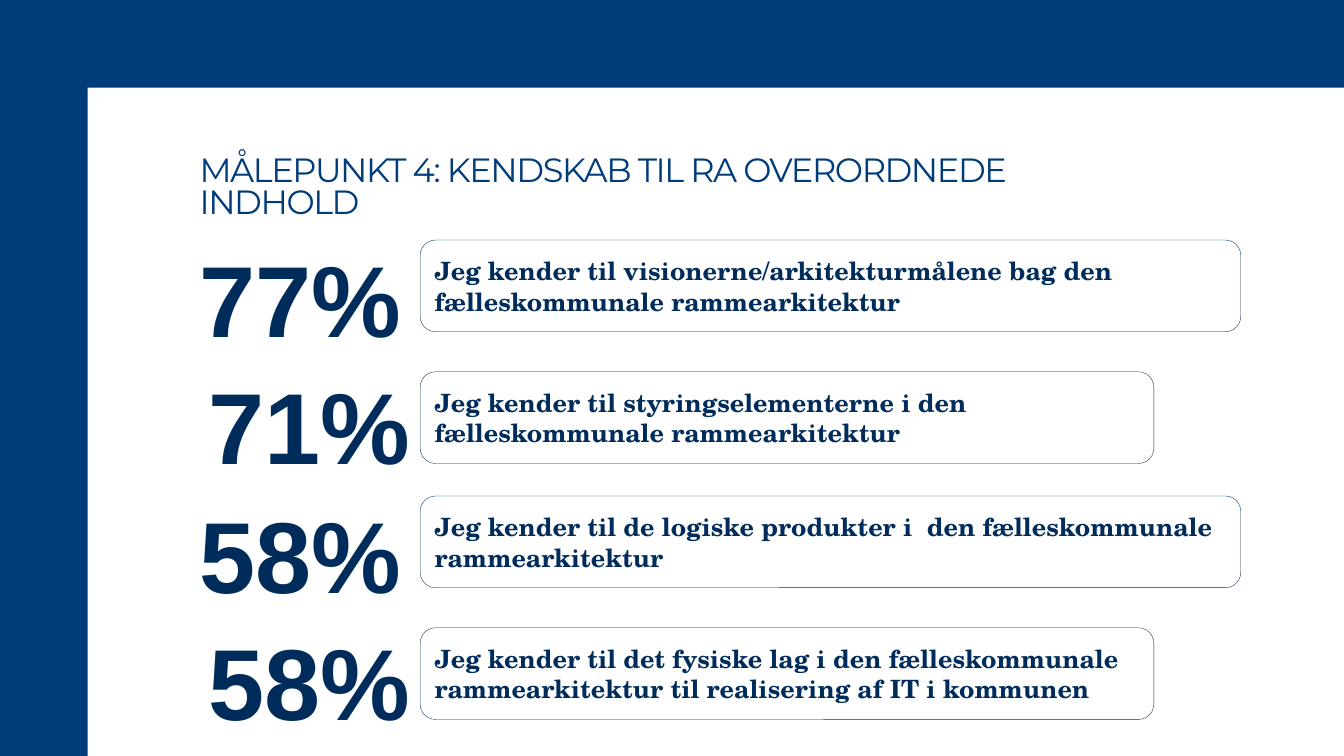
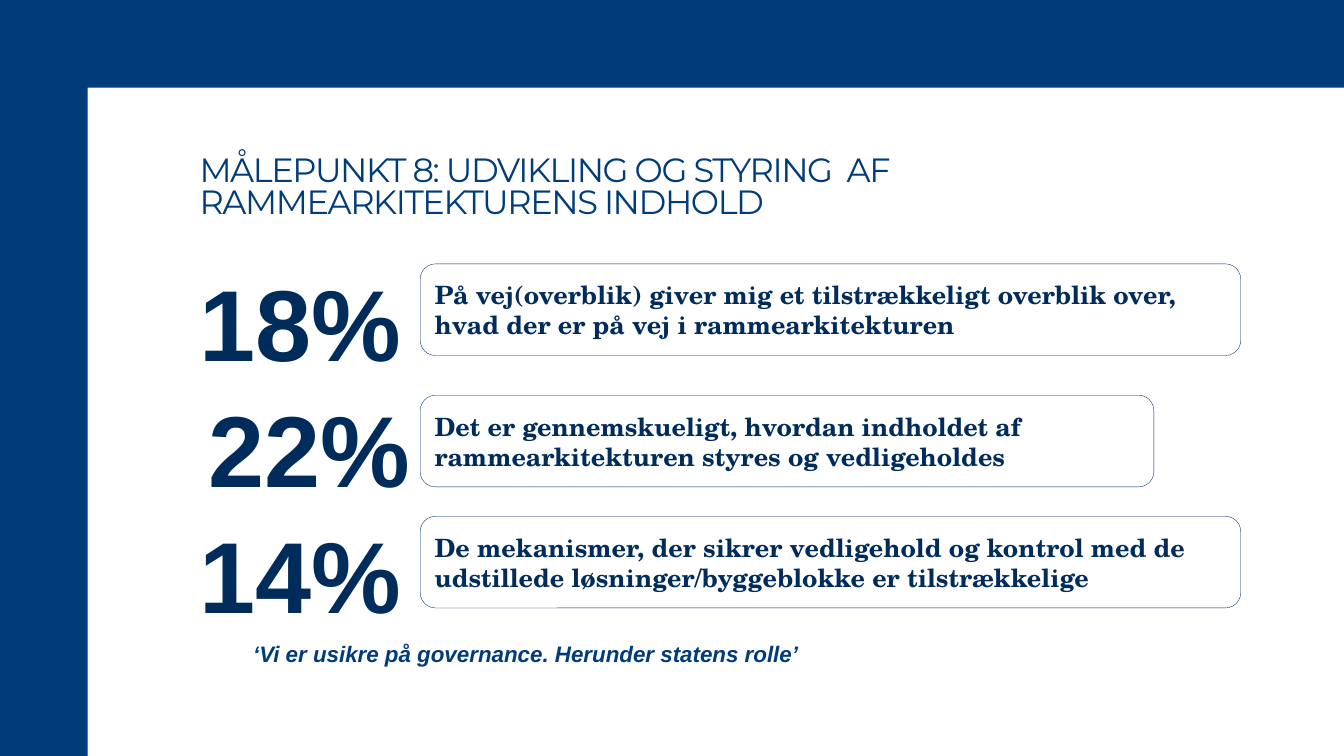
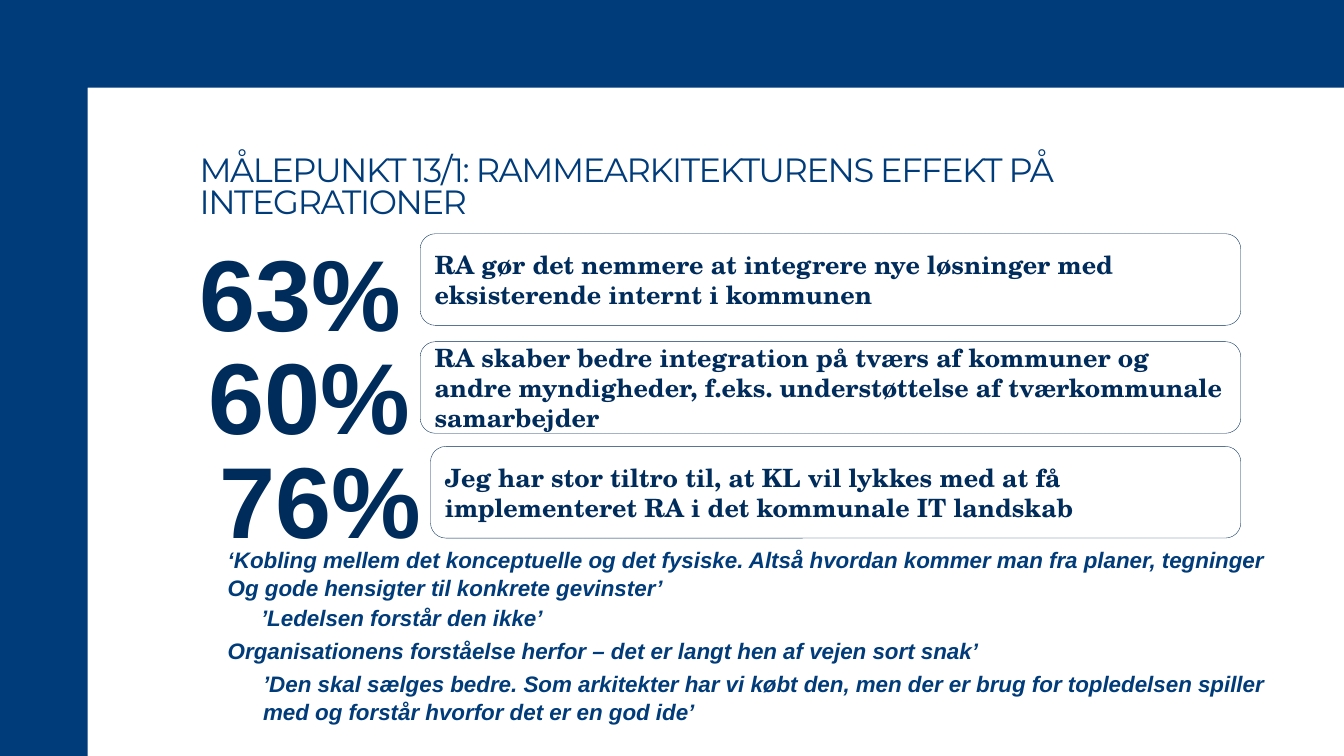
from pptx import Presentation
from pptx.dml.color import RGBColor
from pptx.enum.shapes import MSO_SHAPE as Preset
from pptx.enum.text import MSO_ANCHOR as Anchor, MSO_AUTO_SIZE as AutoSize, PP_ALIGN as Align
from pptx.util import Cm, Pt

WIDTH, HEIGHT, BAND = 33.87, 19.05, 2.21
BLUE, NAVY, OUTLINE = "003B7A", "002C5C", "002C5A"
TITLE = {"name": "Montserrat", "size": Pt(24)}
FIGURE = {"name": "Arial", "size": Pt(72), "bold": True}
CLAIM = {"name": "TeX Gyre Schola", "size": Pt(18), "bold": True}
QUOTE = {"name": "Arial", "size": Pt(16), "bold": True, "italic": True}
LEFT, WIDE, NARROW = 10.59, 20.68, 18.49
ROW_HEIGHT, FIGURE_WIDTH = 2.31, 5.13

SLIDES = [
    {
        "title": "MÅLEPUNKT 4: KENDSKAB TIL RA OVERORDNEDE INDHOLD",
        "title_width": 22.71,
        "rows": [
            (LEFT, 6.05, WIDE, False, "77%", "Jeg kender til visionerne/arkitekturmålene bag den fælleskommunale rammearkitektur"),
            (LEFT, 9.37, NARROW, True, "71%", "Jeg kender til styringselementerne i den fælleskommunale rammearkitektur"),
            (LEFT, 12.5, WIDE, False, "58%", "Jeg kender til de logiske produkter i  den fælleskommunale rammearkitektur"),
            (LEFT, 15.82, NARROW, True, "58%", "Jeg kender til det fysiske lag i den fælleskommunale rammearkitektur til realisering af IT i kommunen"),
        ],
        "quotes": [],
    },
    {
        "title": "MÅLEPUNKT 8: UDVIKLING OG STYRING  AF RAMMEARKITEKTURENS INDHOLD",
        "title_width": 22.71,
        "rows": [
            (LEFT, 6.65, WIDE, False, "18%", "På vej(overblik) giver mig et tilstrækkeligt overblik over, hvad der er på vej i rammearkitekturen"),
            (LEFT, 9.96, NARROW, True, "22%", "Det er gennemskueligt, hvordan indholdet af rammearkitekturen styres og vedligeholdes"),
            (LEFT, 13.01, WIDE, False, "14%", "De mekanismer, der sikrer vedligehold og kontrol med de udstillede løsninger/byggeblokke er tilstrækkelige"),
        ],
        "quotes": [((6.38, 16.1, 13.92, 0.7), ["‘Vi er usikre på governance. Herunder statens rolle’"])],
    },
    {
        "title": "MÅLEPUNKT 13/1: RAMMEARKITEKTURENS EFFEKT PÅ INTEGRATIONER",
        "title_width": 23.01,
        "rows": [
            (LEFT, 5.89, WIDE, False, "63%", "RA gør det nemmere at integrere nye løsninger med eksisterende internt i kommunen"),
            (LEFT, 8.61, WIDE, True, "60%", "RA skaber bedre integration på tværs af kommuner og andre myndigheder, f.eks. understøttelse af tværkommunale samarbejder"),
            (10.85, 11.25, 20.42, True, "76%", "Jeg har stor tiltro til, at KL vil lykkes med at få implementeret RA i det kommunale IT landskab"),
        ],
        "quotes": [
            ((5.74, 13.74, 26.49, 1.42), [
                "‘Kobling mellem det konceptuelle og det fysiske. Altså hvordan kommer man fra planer, tegninger",
                "Og gode hensigter til konkrete gevinster’",
            ]),
            ((6.58, 15.19, 7.19, 0.71), ["’Ledelsen forstår den ikke’"]),
            ((5.74, 16.03, 19.18, 0.71), ["Organisationens forståelse herfor – det er langt hen af vejen sort snak’"]),
            ((6.63, 16.87, 25.58, 1.42), [
                "’Den skal sælges bedre. Som arkitekter har vi købt den, men der er brug for topledelsen spiller",
                "med og forstår hvorfor det er en god ide’",
            ]),
        ],
    },
]


def colour(value):
    """Turn a hex string into a colour."""
    return RGBColor.from_string(value)


def write(frame, lines, style, ink, spacing=None):
    """Write lines as left-aligned paragraphs and return the spans."""
    spans = []
    for index, line in enumerate(lines):
        para = frame.add_paragraph() if index else frame.paragraphs[0]
        para.alignment = Align.LEFT
        para.line_spacing = spacing
        span = para.add_run()
        span.text = line
        for name, value in style.items():
            setattr(span.font, name, value)
        span.font.color.rgb = colour(ink)
        spans.append(span)
    return spans


def text_frame(page, box, **settings):
    """Add a text box without margins and return its frame."""
    frame = page.shapes.add_textbox(*map(Cm, box)).text_frame
    margins = dict.fromkeys(("margin_left", "margin_top", "margin_right", "margin_bottom"), 0)
    for name, value in {**margins, **settings}.items():
        setattr(frame, name, value)
    return frame


def add_band(page):
    """Draw the blue corner band along the top and left edges."""
    corners = [(0, 0), (WIDTH, 0), (WIDTH, BAND), (BAND, BAND), (BAND, HEIGHT), (0, HEIGHT)]
    points = [(Cm(x), Cm(y)) for x, y in corners]
    builder = page.shapes.build_freeform(*points[0])
    builder.add_line_segments(points[1:], close=True)
    band = builder.convert_to_shape()
    band.shadow.inherit = False
    band.fill.solid()
    band.fill.fore_color.rgb = colour(BLUE)
    band.line.fill.background()


def add_title(page, box, title):
    """Write the slide title with tightened letters."""
    frame = text_frame(page, box, word_wrap=True, vertical_anchor=Anchor.BOTTOM)
    for span in write(frame, [title], TITLE, BLUE, 0.8):
        span.font._element.set("spc", "-100")


def add_loose_text(page, box, lines, style, ink):
    """Write unwrapped lines in a box that fits them."""
    frame = text_frame(page, box, word_wrap=False, auto_size=AutoSize.SHAPE_TO_FIT_TEXT)
    write(frame, lines, style, ink, 1.04)


def add_row(page, box, indented, figure, claim):
    """Draw an outlined claim with its percentage on the left."""
    left, top, _, _ = box
    card = page.shapes.add_shape(Preset.ROUNDED_RECTANGLE, *map(Cm, box))
    card.shadow.inherit = False
    card.fill.background()
    card.line.color.rgb = colour(OUTLINE)
    card.line.width = Pt(0.25)
    card.text_frame.word_wrap = True
    card.text_frame.vertical_anchor = Anchor.MIDDLE
    write(card.text_frame, [claim], CLAIM, NAVY)
    gap, rise = (5.33, 0.33) if indented else (5.56, 0.2)
    add_loose_text(page, (left - gap, top - rise, FIGURE_WIDTH, 3.2), [figure], FIGURE, NAVY)


def add_survey_slide(deck, content):
    """Build one survey slide with its title, rows and quotes."""
    page = deck.slides.add_slide(deck.slide_layouts[6])
    add_band(page)
    add_title(page, (5.03, 3.23, content["title_width"], 2.34), content["title"])
    for left, top, width, indented, figure, claim in content["rows"]:
        add_row(page, (left, top, width, ROW_HEIGHT), indented, figure, claim)
    for box, lines in content["quotes"]:
        add_loose_text(page, box, lines, QUOTE, BLUE)


def main():
    """Build and save the deck."""
    deck = Presentation()
    deck.slide_width, deck.slide_height = Cm(WIDTH), Cm(HEIGHT)
    for content in SLIDES:
        add_survey_slide(deck, content)
    deck.save("out.pptx")


if __name__ == "__main__":
    main()
